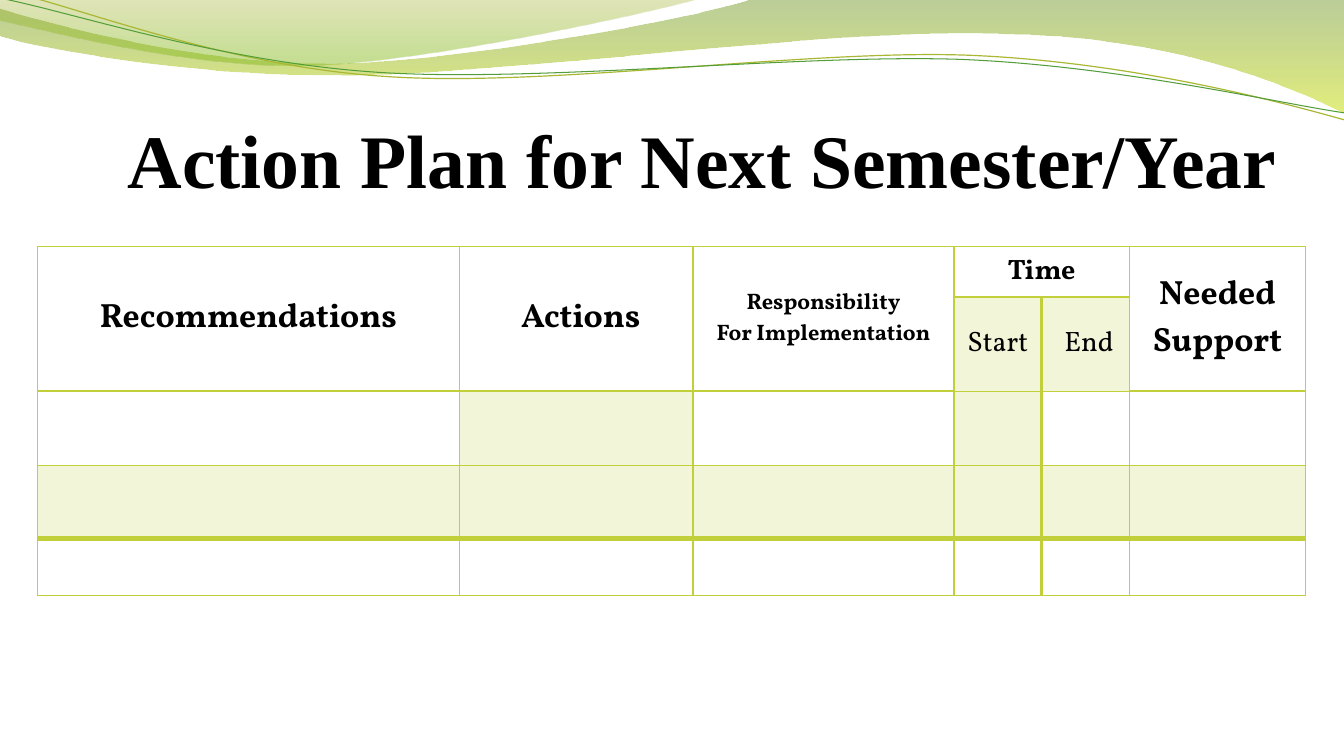
import pptx
import pptx.util
import pptx.dml.color
import pptx.enum.text
import pptx.oxml
import pptx.oxml.ns
from lxml import etree

Pt = pptx.util.Pt
qn = pptx.oxml.ns.qn

COLORS = {"lime": "C0CF3A", "black": "000000", "olive": "A9B733", "green": "549E39",
          "moss": "69921C", "yellow": "CCE10F", "khaki": "9BAA1A", "leaf": "81BA16"}

# Content
TITLE = "Action Plan for Next Semester/Year"
# row, column, last row, last column, text, size, bold
HEADINGS = [
    (0, 0, 1, 0, "Recommendations", 24, True),
    (0, 1, 1, 1, "Actions ", 24, True),
    (0, 2, 1, 2, "Responsibility\nFor Implementation", 16, True),
    (0, 3, 0, 4, "Time", 20, True),
    (0, 5, 1, 5, "Needed\nSupport", 24, True),
    (1, 3, 1, 3, "Start", 20, False),
    (1, 4, 1, 4, "End ", 20, False),
]
COLUMN_WIDTHS = [301.2, 167, 186.5, 62.6, 62.6, 126]
ROW_HEIGHTS = [36, 56.9, 53.3, 51.8, 41]
LINES_BELOW = [2, 2, 1, 4, 1]
TIME_COLUMNS = (3, 4)
SHADED = {1: (3, 4), 2: (1, 3), 3: range(6)}

# Outlines: two numbers are a corner, six are a Bezier curve
# Gradient stops: position, colour, opacity in percent
BANDS = [
    ([(960.5, 0), (537.8, -0.7), (503.3, 12.2, 323.3, 45.4, 232.6, 45.4),
      (141.1, 45.4, 40.3, 18.7, 0, 6.5), (-0.7, 25.9),
      (16.6, 31.7, 125.3, 54.7, 244.1, 54), (363.6, 54, 594, 20.2, 713.5, 24.5),
      (836.6, 25.9, 916.6, 59.8, 961.2, 81.4)],
     [(0, "moss", 45), (1, "yellow", 55)]),
    ([(500.4, -0.7), (471.6, 7.9, 305.3, 44.6, 222.5, 46.8),
      (139, 49.7, 37.4, 23, 0, 15.1), (0, 0)],
     [(0, "khaki", 30), (0.8, "leaf", 45)]),
]
WAVES = [
    ([(960.5, 85.7), (914.4, 72.7, 808.6, 44.6, 694.8, 39.6),
      (580.3, 34.6, 391.7, 62.6, 276.5, 54.7), (161.3, 47.5, 59, 5.8, 2.2, -7.2)],
     "olive", 0.85),
    ([(960.5, 80.6), (915.1, 74.2, 802.8, 47.5, 688.3, 42.5),
      (573.8, 38.2, 387.4, 59, 272.2, 51.8), (157.7, 44.6, 56.9, 10.1, 0, -1.4)],
     "green", 0.75),
]


def rgb(name):
    return pptx.dml.color.RGBColor.from_string(COLORS[name])


def set_opacity(color_element, percent):
    etree.SubElement(color_element, qn("a:alpha")).set("val", str(percent * 1000))


def add_outline(slide, outline, close):
    points = [(Pt(segment[i]), Pt(segment[i + 1]))
              for segment in outline for i in range(0, len(segment), 2)]
    builder = slide.shapes.build_freeform(*points[0])
    builder.add_line_segments(points[1:], close=False)
    shape = builder.convert_to_shape()
    shape.shadow.inherit = False

    # Join each curve's three straight steps into one Bezier segment
    route = shape._element.spPr.find(".//" + qn("a:pathLst"))[0]
    steps = iter(route.findall(qn("a:lnTo")))
    for segment in outline[1:]:
        first = next(steps)
        if len(segment) == 6:
            first.tag = qn("a:cubicBezTo")
            for step in (next(steps), next(steps)):
                first.append(step[0])
                route.remove(step)
    if close:
        etree.SubElement(route, qn("a:close"))
    return shape


def add_decoration(slide):
    for outline, stops in BANDS:
        shape = add_outline(slide, outline, True)
        shape.line.fill.background()
        shape.fill.gradient()
        shape.fill.gradient_angle = 270
        for stop, (position, color, opacity) in zip(shape.fill.gradient_stops, stops):
            stop.position = position
            stop.color.rgb = rgb(color)
        color_elements = shape._element.spPr.findall(".//" + qn("a:srgbClr"))
        for element, (position, color, opacity) in zip(color_elements, stops):
            set_opacity(element, opacity)
    for outline, color, width in WAVES:
        shape = add_outline(slide, outline, False)
        shape.fill.background()
        shape.line.color.rgb = rgb(color)
        shape.line.width = Pt(width)


def write(text_frame, text, size, bold, font, alignment):
    text_frame.text = text
    for paragraph in text_frame.paragraphs:
        paragraph.alignment = alignment
        paragraph._p.get_or_add_pPr().set("rtl", "1")
        for run in paragraph.runs:
            run.font.size = Pt(size)
            run.font.bold = bold
            run.font.name = font
            run.font.color.rgb = rgb("black")


def set_borders(cell, widths):
    properties = cell._tc.get_or_add_tcPr()
    for index, (side, width) in enumerate(widths.items()):
        line = etree.Element(qn("a:ln" + side), w=str(Pt(width)))
        fill = etree.SubElement(line, qn("a:solidFill"))
        etree.SubElement(fill, qn("a:srgbClr")).set("val", COLORS["lime"])
        properties.insert(index, line)


def line_below(row, column):
    return 1 if row == 1 and column in TIME_COLUMNS else LINES_BELOW[row]


def add_plan_table(slide):
    frame = slide.shapes.add_table(len(ROW_HEIGHTS), len(COLUMN_WIDTHS), Pt(26.8), Pt(176),
                                   Pt(sum(COLUMN_WIDTHS)), Pt(sum(ROW_HEIGHTS)))
    table = frame.table
    table.first_row = table.horz_banding = False
    for column, width in zip(table.columns, COLUMN_WIDTHS):
        column.width = Pt(width)
    for row, height in zip(table.rows, ROW_HEIGHTS):
        row.height = Pt(height)

    # Fills and borders
    for row in range(len(ROW_HEIGHTS)):
        for column in range(len(COLUMN_WIDTHS)):
            cell = table.cell(row, column)
            cell.margin_left = cell.margin_right = Pt(5)
            cell.margin_top, cell.margin_bottom = Pt(0.7), Pt(0)
            cell.vertical_anchor = pptx.enum.text.MSO_ANCHOR.MIDDLE
            if column in SHADED.get(row, ()):
                cell.fill.solid()
                cell.fill.fore_color.rgb = rgb("lime")
                set_opacity(cell._tc.tcPr.find(".//" + qn("a:srgbClr")), 20)
            else:
                cell.fill.background()
            set_borders(cell, {
                "L": 2 if row and column == TIME_COLUMNS[1] else 1,
                "R": 2 if row and column == TIME_COLUMNS[0] else 1,
                "T": line_below(row - 1, column) if row else 1,
                "B": line_below(row, column)})

    # Headings
    for row, column, last_row, last_column, text, size, bold in HEADINGS:
        cell = table.cell(row, column)
        if (row, column) != (last_row, last_column):
            cell.merge(table.cell(last_row, last_column))
        write(cell.text_frame, text, size, bold, "Vollkorn", pptx.enum.text.PP_ALIGN.CENTER)


def add_title(slide):
    title = slide.shapes.title
    title.left, title.top, title.width, title.height = Pt(48), Pt(55.4), Pt(864), Pt(90)
    frame = title.text_frame
    frame.margin_left = frame.margin_right = frame.margin_bottom = Pt(0)
    frame.margin_top = Pt(3.6)
    frame.vertical_anchor = pptx.enum.text.MSO_ANCHOR.BOTTOM
    frame.auto_size = pptx.enum.text.MSO_AUTO_SIZE.NONE
    write(frame, TITLE, 54, True, "Times New Roman", pptx.enum.text.PP_ALIGN.RIGHT)


def main():
    presentation = pptx.Presentation()
    presentation.slide_width, presentation.slide_height = Pt(960), Pt(540)
    slide = presentation.slides.add_slide(presentation.slide_layouts[5])
    add_decoration(slide)
    add_title(slide)
    add_plan_table(slide)
    presentation.save("out.pptx")


if __name__ == "__main__":
    main()
